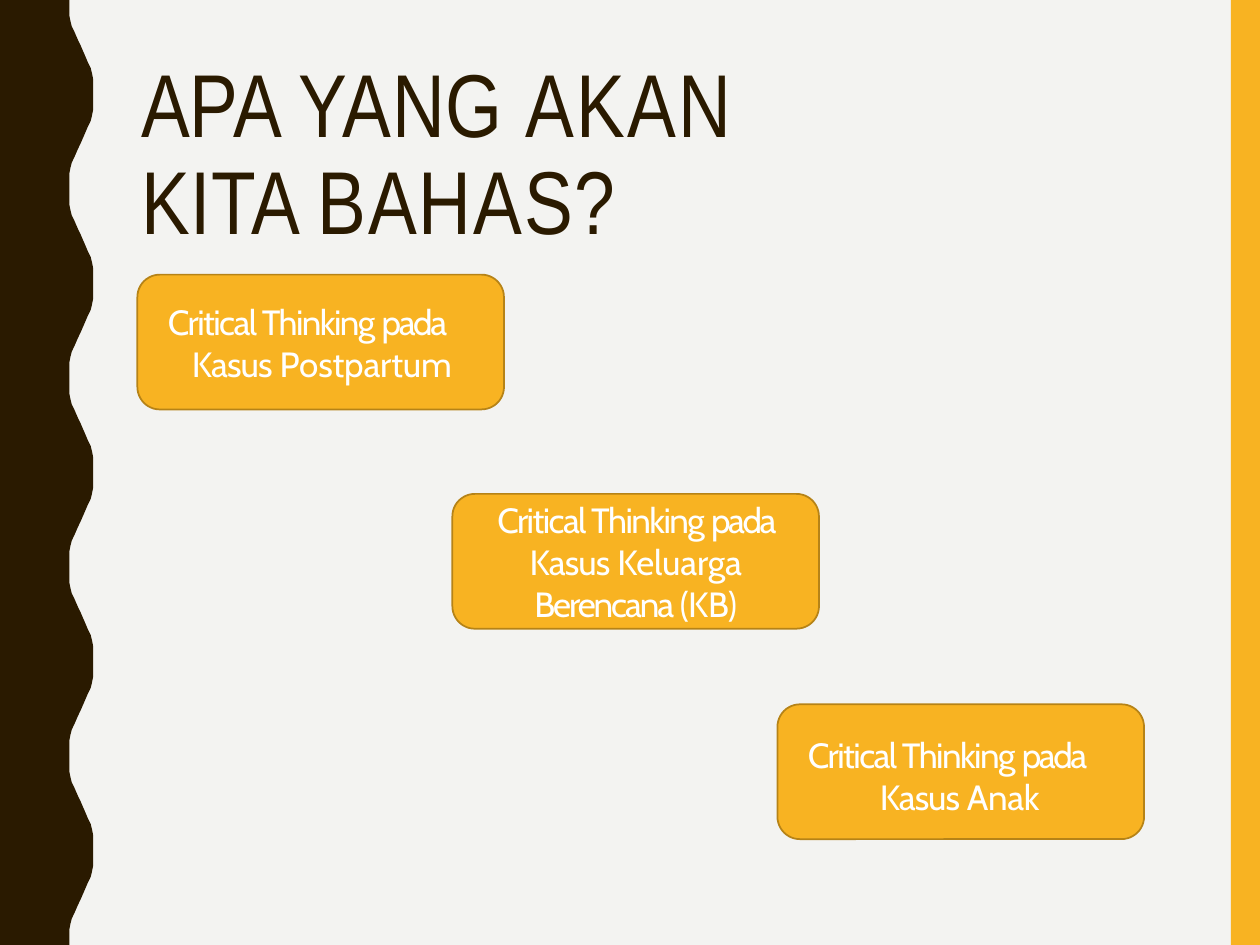
from pptx import Presentation
from pptx.dml.color import RGBColor
from pptx.enum.shapes import MSO_SHAPE
from pptx.enum.text import MSO_ANCHOR, PP_ALIGN
from pptx.util import Inches, Pt

RECTANGLE = MSO_SHAPE.RECTANGLE
ROUNDED = MSO_SHAPE.ROUNDED_RECTANGLE
MIDDLE, TOP = MSO_ANCHOR.MIDDLE, MSO_ANCHOR.TOP
LEFT, CENTER = PP_ALIGN.LEFT, PP_ALIGN.CENTER

COLUMNS, ROWS = 10, 7.5
CELL = Inches(1)
COLORS = {"paper": "F3F3F1", "gold": "F8B322", "edge": "B68317",
          "brown": "2A1A00", "white": "FFFFFF"}

WAVE_COUNT = 5
HALF_WAVE = [(0.55, 0), (0.55, 0.06), (0.55, 0.12), (0.56, 0.17), (0.57, 0.21),
             (0.59, 0.25), (0.62, 0.32), (0.64, 0.36), (0.67, 0.43), (0.7, 0.5),
             (0.72, 0.54), (0.73, 0.58), (0.74, 0.63), (0.74, 0.69), (0.74, 0.75)]

TITLE = [("APA ", 0), ("YANG ", 0.5), ("AKAN ", 1.4), ("KITA ", 0.3), ("BAHAS?", 1.1)]
OPENING = [("Critical Thinking ", -0.9), ("pada ", -1.4)]
CARD_SIZE = (2.91, 1.07)
CARDS = [
    {"at": (1.09, 2.18), "align": LEFT, "indent": 0.19, "drop": 0,
     "spans": [("Kasus ", -0.5), ("Postpartum", -0.1)]},
    {"at": (3.59, 3.92), "align": CENTER, "indent": 0, "drop": 0,
     "spans": [("Kasus ", -0.5), ("Keluarga ", -0.1), ("Berencana ", -1.2), ("(KB)", -0.2)]},
    {"at": (6.17, 5.59), "align": LEFT, "indent": 0.57, "drop": 0.06,
     "spans": [("Kasus ", -0.6), ("Anak", -0.2)]},
]


def color(name):
    """Return the named palette colour."""
    return RGBColor.from_string(COLORS[name])


def cells(*lengths):
    """Turn grid lengths into slide lengths."""
    return [round(length * CELL) for length in lengths]


def paint(shape, fill, line=None):
    """Give a shape a flat fill and an optional outline."""
    shape.shadow.inherit = False
    shape.fill.solid()
    shape.fill.fore_color.rgb = color(fill)
    if line:
        shape.line.color.rgb = color(line)
        shape.line.width = Pt(1)
    else:
        shape.line.fill.background()


def set_frame(frame, margins, anchor):
    """Set wrapping, margins and anchor of a text frame."""
    frame.word_wrap = True
    frame.vertical_anchor = anchor
    (frame.margin_left, frame.margin_top,
     frame.margin_right, frame.margin_bottom) = cells(*margins)


def add_spans(para, spans, font, size, ink):
    """Add runs of text, each with its own letter spacing."""
    for words, spacing in spans:
        span = para.add_run()
        span.text = words
        span.font.name = font
        span.font.size = Pt(size)
        span.font.color.rgb = color(ink)
        span._r.get_or_add_rPr().set("spc", str(round(spacing * 100)))


def add_wave(page, box):
    """Draw the brown band whose right edge repeats one wave down the box."""
    left, top, width, height = box
    period = height / WAVE_COUNT
    mirrored = [(x, period - y) for x, y in reversed(HALF_WAVE[1:-1])]
    edge = [(left + x, top + number * period + y)
            for number in range(WAVE_COUNT) for x, y in HALF_WAVE + mirrored]
    edge += [(left + HALF_WAVE[0][0], top + height), (left, top + height)]
    builder = page.shapes.build_freeform(*cells(left, top), scale=1.0)
    builder.add_line_segments([cells(*point) for point in edge], close=True)
    paint(builder.convert_to_shape(), "brown")


def add_stripe(page, box):
    """Draw the gold stripe."""
    paint(page.shapes.add_shape(RECTANGLE, *cells(*box)), "gold")


def add_title(page, box):
    """Place the heading in the box."""
    frame = page.shapes.add_textbox(*cells(*box)).text_frame
    set_frame(frame, (0.01, 0.11, 0, 0), TOP)
    para = frame.paragraphs[0]
    para.line_spacing = Pt(55.1)
    para.space_before = Pt(8)
    add_spans(para, TITLE, "Arial Narrow", 51, "brown")


def add_card(page, box, card):
    """Place one rounded topic card in the box."""
    shape = page.shapes.add_shape(ROUNDED, *cells(*box))
    paint(shape, "gold", "edge")
    frame = shape.text_frame
    set_frame(frame, (0.19, card["drop"], 0.19, 0), MIDDLE)
    para = frame.paragraphs[0]
    para.alignment = card["align"]
    if card["indent"]:
        indent, = cells(card["indent"])
        properties = para._p.get_or_add_pPr()
        properties.set("marL", str(indent))
        properties.set("indent", str(-indent))
    add_spans(para, OPENING + card["spans"], "Cabin", 20, "white")


def main():
    """Build the slide and save the deck."""
    deck = Presentation()
    deck.slide_width, deck.slide_height = cells(COLUMNS, ROWS)
    page = deck.slides.add_slide(deck.slide_layouts[6])
    page.background.fill.solid()
    page.background.fill.fore_color.rgb = color("paper")
    add_stripe(page, (COLUMNS - 0.23, 0, 0.23, ROWS))
    add_wave(page, (0, 0, 0.74, ROWS))
    add_title(page, (1.11, 0.36, 5.99, 1.64))
    for card in CARDS:
        add_card(page, card["at"] + CARD_SIZE, card)
    deck.save("out.pptx")


if __name__ == "__main__":
    main()
